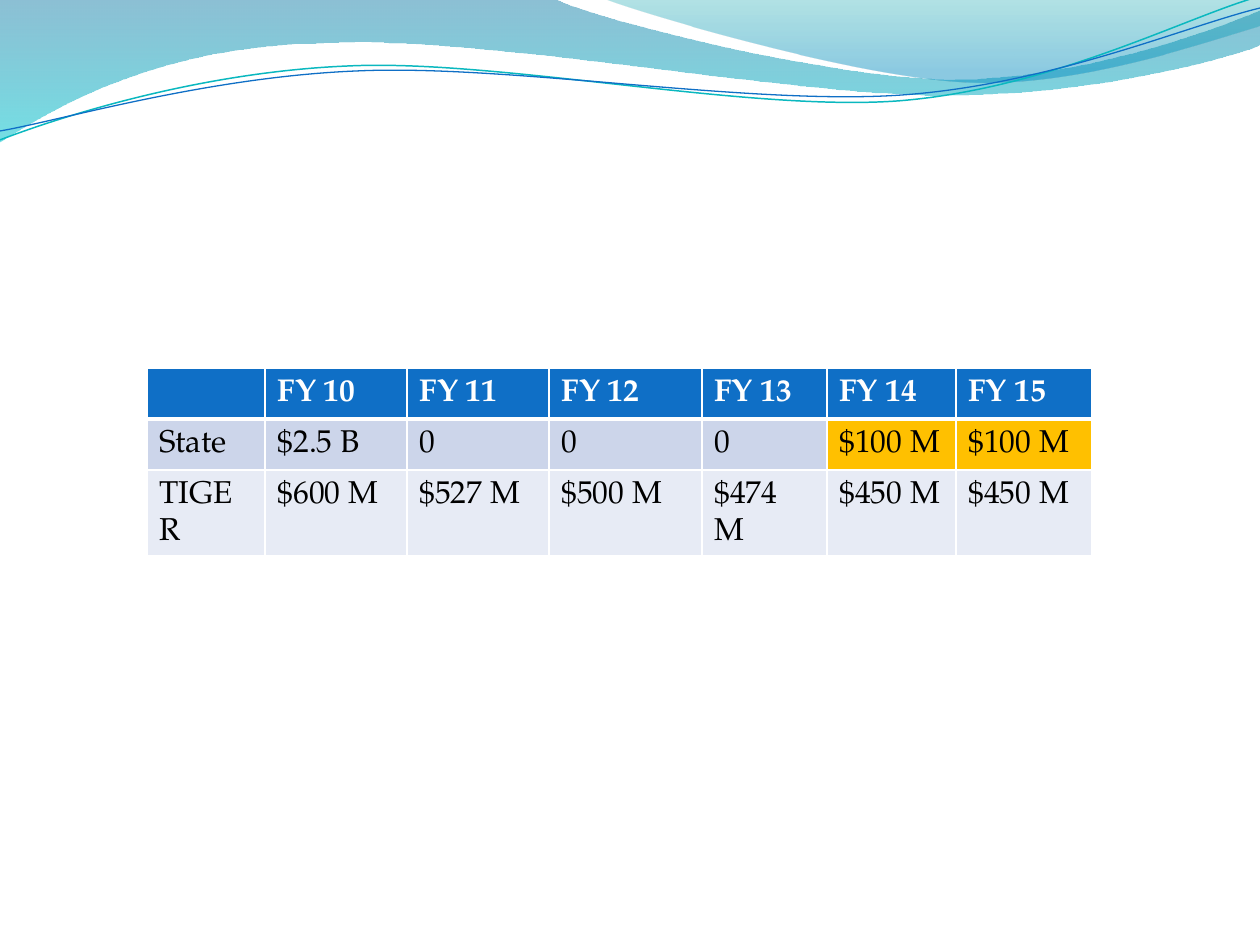
from math import cos, radians, sin

from lxml.etree import SubElement
from pptx import Presentation
from pptx.dml.color import RGBColor as RGB
from pptx.oxml import parse_xml
from pptx.oxml.ns import nsdecls, qn
from pptx.util import Emu, Pt

PX = 914400 / 126
FONT = "TeX Gyre Pagella"

WHITE = RGB(0xFF, 0xFF, 0xFF)
BLACK = RGB(0x00, 0x00, 0x00)
BLUE = RGB(0x0F, 0x6F, 0xC6)
TEAL = RGB(0x0A, 0xB8, 0xBF)
BAND_DARK = RGB(0xCC, 0xD5, 0xEA)
BAND_LIGHT = RGB(0xE7, 0xEB, 0xF5)
AMBER = RGB(0xFF, 0xC0, 0x00)
DEEP_BLUE = RGB(0x00, 0x74, 0xA1)
AQUA = RGB(0x00, 0xC6, 0xCF)
SEA_GREEN = RGB(0x00, 0xA1, 0xA9)
SKY_BLUE = RGB(0x00, 0x8B, 0xBF)

BACK_WAVE = [
    (0, 0), (554, -1),
    (600, 21, 837, 79, 955, 79), (1075, 79, 1207, 33, 1260, 11),
    (1261, 45),
    (1239, 55, 1096, 96, 940, 95), (784, 95, 481, 35, 324, 43),
    (163, 45, 58, 105, -1, 142),
    (0, 0),
]
FRONT_WAVE = [
    (604, -1),
    (641, 14, 859, 78, 969, 82), (1079, 87, 1211, 40, 1260, 26),
    (1260, 0), (604, -1),
]
TEAL_LINE = [
    (0, 140),
    (60, 117, 199, 72, 349, 66), (498, 59, 747, 112, 898, 101),
    (1050, 89, 1182, 19, 1257, -3),
]
BLUE_LINE = [
    (0, 131),
    (59, 121, 207, 77, 357, 71), (508, 64, 752, 106, 903, 95),
    (1053, 84, 1186, 26, 1260, 8),
]

COLUMNS = [118, 142, 142, 153, 125, 129, 136]
FUNDING = [
    ["", "FY 10", "FY 11", "FY 12", "FY 13", "FY 14", "FY 15"],
    ["State", "$2.5 B", "0", "0", "0", "$100 M", "$100 M"],
    ["TIGER", "$600 M", "$527 M", "$500 M", "$474 M", "$450 M", "$450 M"],
]
ROW_FILLS = [BLUE, BAND_DARK, BAND_LIGHT]
HIGHLIGHTS = {(1, 5), (1, 6)}


def px(n):
    return Emu(round(n * PX))


def pairs(path):
    return [seg[i:i + 2] for seg in path for i in range(0, len(seg), 2)]


def turn(points, degrees):
    c, s = cos(radians(degrees)), sin(radians(degrees))
    return [(x * c - y * s, x * s + y * c) for x, y in points]


def level(points, tilt):
    flat = turn(points, tilt)
    mid = [(min(v) + max(v)) / 2 for v in zip(*flat)]
    center = turn([mid], -tilt)[0]
    dx, dy = center[0] - mid[0], center[1] - mid[1]
    return [(x + dx, y + dy) for x, y in flat]


def put_text(tf, text, size=18, color=BLACK, bold=False, spacing=1.15, after=10):
    p = tf.paragraphs[0]
    p.line_spacing, p.space_after = spacing, Pt(after)
    r = p.add_run()
    r.text = text
    r.font.name, r.font.size, r.font.bold = FONT, Pt(size), bold
    r.font.color.rgb = color


def set_borders(cell, color=WHITE, **widths):
    tc_pr = cell._tc.get_or_add_tcPr()
    for i, side in enumerate("LRTB"):
        width = Pt(widths.get(side, 1))
        tc_pr.insert(i, parse_xml(
            f'<a:ln{side} {nsdecls("a")} w="{width}"><a:solidFill>'
            f'<a:srgbClr val="{color}"/></a:solidFill></a:ln{side}>'))


class Deck:
    def __init__(self, width, height):
        self.prs = Presentation()
        self.prs.slide_width, self.prs.slide_height = px(width), px(height)
        self.s = self.prs.slides.add_slide(self.prs.slide_layouts[6])

    def outline(self, path, close, tilt=0):
        points = [(px(x), px(y)) for x, y in level(pairs(path), tilt)]
        builder = self.s.shapes.build_freeform(*points[0])
        builder.add_line_segments(points[1:], close=close)
        sp = builder.convert_to_shape()
        sp.shadow.inherit = False
        steps = iter(list(sp._element.iter(qn("a:lnTo"))))
        for seg in path[1:]:
            step = next(steps)
            if len(seg) == 6:
                bezier = parse_xml(f'<a:cubicBezTo {nsdecls("a")}/>')
                step.addprevious(bezier)
                for part in (step, next(steps), next(steps)):
                    bezier.append(part[0])
                    part.getparent().remove(part)
        return sp

    def wave(self, path, stops):
        sp = self.outline(path, True)
        sp.line.fill.background()
        sp.fill.gradient()
        sp.fill.gradient_angle = 270
        for stop, (position, color, _) in zip(sp.fill.gradient_stops, stops):
            stop.position, stop.color.rgb = position, color
        for clr, (_, _, opacity) in zip(sp._element.spPr.iter(qn("a:srgbClr")), stops):
            SubElement(clr, qn("a:alpha")).set("val", str(opacity * 1000))

    def curve(self, path, color, width, tilt=2.7):
        sp = self.outline(path, False, tilt)
        sp.rotation = 360 - tilt
        sp.fill.background()
        sp.line.color.rgb, sp.line.width = color, Pt(width)

    def table(self, x, y, columns, row_height, rows):
        table = self.s.shapes.add_table(
            len(rows), len(columns), px(x), px(y),
            px(sum(columns)), px(row_height * len(rows))).table
        table.first_row = table.horz_banding = False
        for col, width in zip(table.columns, columns):
            col.width = px(width)
        for i, row in enumerate(rows):
            header = i == 0
            for j, text in enumerate(row):
                cell = table.cell(i, j)
                cell.fill.solid()
                cell.fill.fore_color.rgb = AMBER if (i, j) in HIGHLIGHTS else ROW_FILLS[i]
                set_borders(cell, T=3 if i == 1 else 1, B=3 if header else 1)
                if text:
                    put_text(cell.text_frame, text, bold=header,
                             color=WHITE if header else BLACK)


def main():
    deck = Deck(1260, 945)
    deck.wave(BACK_WAVE, [(0, DEEP_BLUE, 45), (1, AQUA, 55)])
    deck.wave(FRONT_WAVE, [(0, SEA_GREEN, 30), (0.8, SKY_BLUE, 45)])
    deck.curve(TEAL_LINE, TEAL, 0.85)
    deck.curve(BLUE_LINE, BLUE, 0.75)
    deck.table(147, 368, COLUMNS, 51, FUNDING)
    deck.prs.save("out.pptx")


if __name__ == "__main__":
    main()
